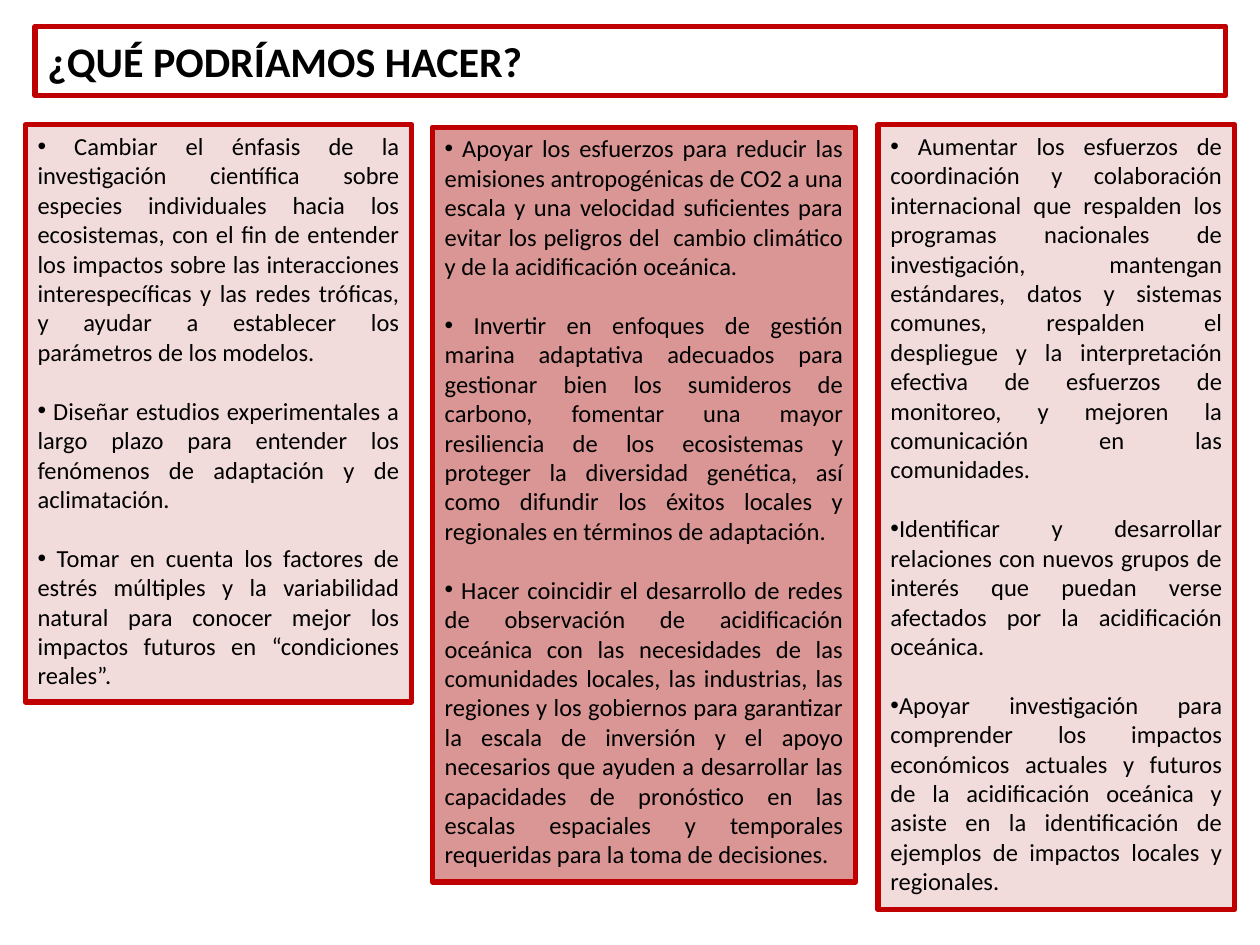
"""Build the slide '¿Qué podríamos hacer?' with a title and three columns of proposals."""
import pptx
import pptx.dml.color
import pptx.enum.text
import pptx.util
import lxml.etree
import pptx.oxml.ns

Pt = pptx.util.Pt


def rgb(value):
    return pptx.dml.color.RGBColor.from_string(value)


def add_box(s, left, top, width, height, paragraphs, size):
    sp = s.shapes.add_textbox(Pt(left), Pt(top), Pt(width), Pt(height))
    sp.line.color.rgb = rgb("C00000")
    sp.line.width = Pt(3)
    tf = sp.text_frame
    tf.word_wrap = True
    tf.text = "\n".join(paragraphs)
    for p in tf.paragraphs:
        for r in p.runs:
            r.font.name = "Calibri"
            r.font.size = Pt(size)
            r.font.color.rgb = rgb("000000")
    return sp


columns = [
    (14.4, 71.3, 221, 329.8, "F2DCDB", [
        " Cambiar el énfasis de la investigación científica sobre especies individuales hacia los ecosistemas, con el fin de entender los impactos sobre las interacciones interespecíficas y las redes tróficas, y ayudar a establecer los parámetros de los modelos.",
        " Diseñar estudios experimentales a largo plazo para entender los fenómenos de adaptación y de aclimatación.",
        " Tomar en cuenta los factores de estrés múltiples y la variabilidad natural para conocer mejor los impactos futuros en “condiciones reales”.",
    ]),
    (247, 72.7, 242, 431.3, "D99694", [
        " Apoyar los esfuerzos para reducir las emisiones antropogénicas de CO2 a una escala y una velocidad suficientes para evitar los peligros del  cambio climático y de la acidificación oceánica.",
        " Invertir en enfoques de gestión marina adaptativa adecuados para gestionar bien los sumideros de carbono, fomentar una mayor resiliencia de los ecosistemas y proteger la diversidad genética, así como difundir los éxitos locales y regionales en términos de adaptación.",
        " Hacer coincidir el desarrollo de redes de observación de acidificación oceánica con las necesidades de las comunidades locales, las industrias, las regiones y los gobiernos para garantizar la escala de inversión y el apoyo necesarios que ayuden a desarrollar las capacidades de pronóstico en las escalas espaciales y temporales requeridas para la toma de decisiones.",
    ]),
    (501.8, 71.3, 203.8, 448.6, "F2DCDB", [
        " Aumentar los esfuerzos de coordinación y colaboración internacional que respalden los programas nacionales de investigación, mantengan estándares, datos y sistemas comunes, respalden el despliegue y la interpretación efectiva de esfuerzos de monitoreo, y mejoren la comunicación en las comunidades.",
        "Identificar y desarrollar relaciones con nuevos grupos de interés que puedan verse afectados por la acidificación oceánica.",
        "Apoyar investigación para comprender los impactos económicos actuales y futuros de la acidificación oceánica y asiste en la identificación de ejemplos de impactos locales y regionales.",
    ]),
]

prs = pptx.Presentation()
prs.slide_width, prs.slide_height = Pt(720), Pt(540)
s = prs.slides.add_slide(prs.slide_layouts[6])

title = add_box(s, 20, 15, 680.4, 39.6, ["¿QUÉ PODRÍAMOS HACER?"], 24)
title.text_frame.vertical_anchor = pptx.enum.text.MSO_ANCHOR.MIDDLE
title.text_frame.paragraphs[0].runs[0].font.bold = True

for left, top, width, height, fill, proposals in columns:
    sp = add_box(s, left, top, width, height, proposals, 14)
    sp.fill.solid()
    sp.fill.fore_color.rgb = rgb(fill)
    for i, p in enumerate(sp.text_frame.paragraphs):
        p.alignment = pptx.enum.text.PP_ALIGN.JUSTIFY
        p.space_before = Pt(16.8 if i else 0)
        pPr = p._p.get_or_add_pPr()
        for tag, key, value in (("a:buFont", "typeface", "Arial"), ("a:buChar", "char", "•")):
            lxml.etree.SubElement(pPr, pptx.oxml.ns.qn(tag)).set(key, value)

prs.save("out.pptx")
